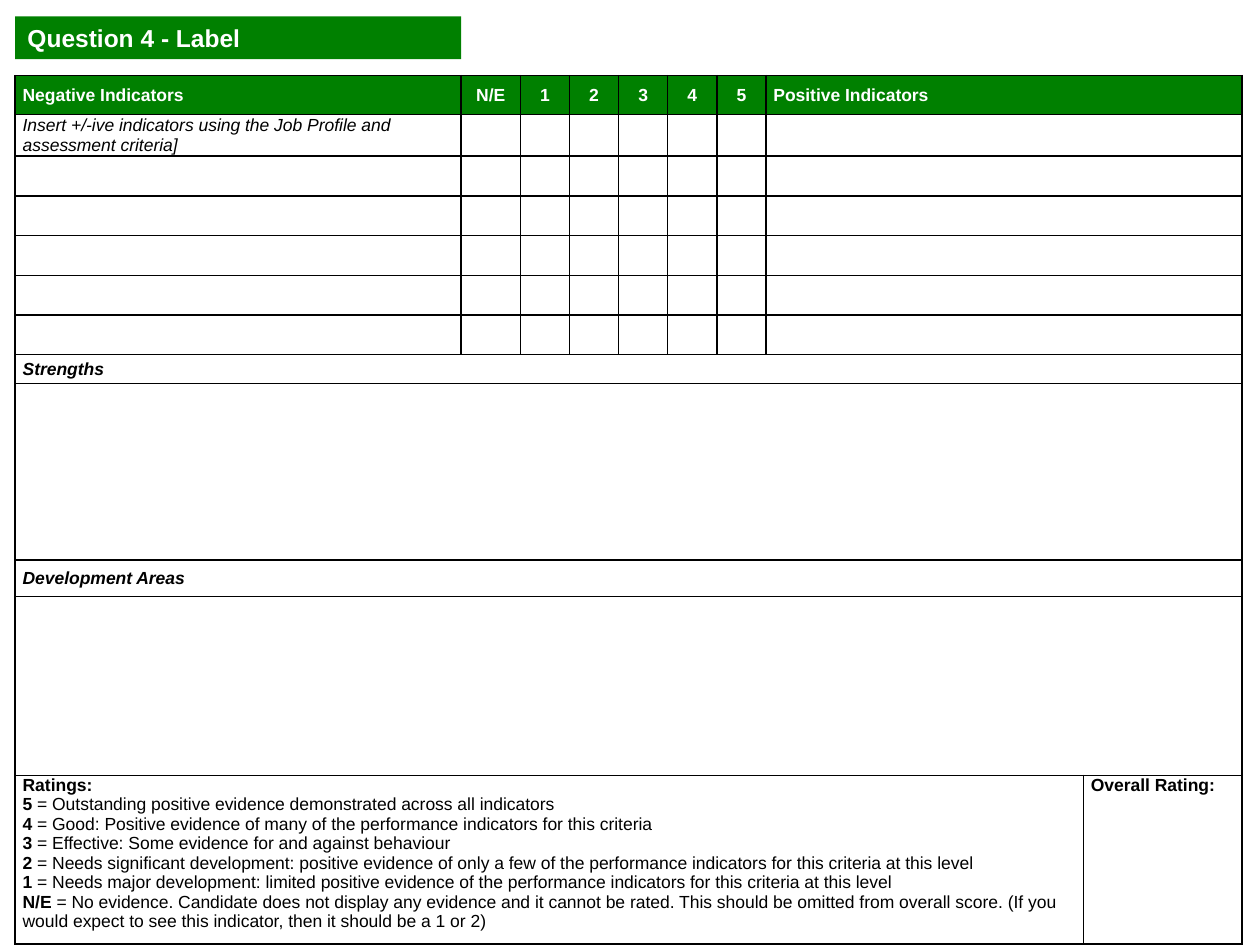
from lxml.etree import SubElement
from pptx import Presentation
from pptx.dml.color import RGBColor
from pptx.enum.shapes import MSO_SHAPE
from pptx.enum.text import MSO_ANCHOR, PP_ALIGN
from pptx.oxml.ns import qn
from pptx.util import Inches, Pt

COLORS = {"green": "008000", "white": "FFFFFF", "black": "000000"}
FONT = "Arial"
TITLE = "Question 4 - Label"
HEADS = ["Negative Indicators", "N/E", "1", "2", "3", "4", "5", "Positive Indicators"]
HINT = "Insert +/-ive indicators using the Job Profile and assessment criteria]"
RATINGS = [
    ("5", "Outstanding positive evidence demonstrated across all indicators"),
    ("4", "Good: Positive evidence of many of the performance indicators for this criteria"),
    ("3", "Effective: Some evidence for and against behaviour"),
    ("2", "Needs significant development: positive evidence of only a few of the "
          "performance indicators for this criteria at this level"),
    ("1", "Needs major development: limited positive evidence of the performance "
          "indicators for this criteria at this level"),
    ("N/E", "No evidence. Candidate does not display any evidence and it cannot be rated. "
            "This should be omitted from overall score. (If you would expect to see this "
            "indicator, then it should be a 1 or 2)"),
]
LEFT, TOP = 0.12, 0.6
COLS = [3.54, 0.47] + [0.39] * 5 + [2.52, 1.26]
ROWS = [0.31, 0.33] + [0.315] * 5 + [0.23, 1.4, 0.29, 1.42, 1.34]
STRONG, STRONG_BOX, DEVELOP, DEVELOP_BOX, RATE = range(7, 12)
LAST = len(COLS) - 1


def color(name):
    return RGBColor.from_string(COLORS[name])


def write(frame, lines, size=10, tone="black", italic=False, align=PP_ALIGN.LEFT):
    """Fill a frame with lines, each a list of (text, bold) runs."""
    for i, runs in enumerate(lines):
        para = frame.paragraphs[0] if i == 0 else frame.add_paragraph()
        para.alignment = align
        for text, bold in runs:
            run = para.add_run()
            run.text = text
            font = run.font
            font.name, font.size = FONT, Pt(size)
            font.bold, font.italic = bold, italic
            font.color.rgb = color(tone)


def frame_cell(cell):
    props = cell._tc.get_or_add_tcPr()
    for side in ("lnL", "lnR", "lnT", "lnB"):
        line = SubElement(props, qn(f"a:{side}"), w=str(Pt(1)))
        fill = SubElement(line, qn("a:solidFill"))
        SubElement(fill, qn("a:srgbClr"), val=COLORS["black"])


def add_title(slide):
    bar = slide.shapes.add_shape(MSO_SHAPE.RECTANGLE, Inches(LEFT), Inches(0.13),
                                 Inches(COLS[0]), Inches(0.34))
    bar.shadow.inherit = False
    bar.fill.solid()
    bar.fill.fore_color.rgb = color("green")
    bar.line.fill.background()
    bar.text_frame.word_wrap = True
    write(bar.text_frame, [[(TITLE, True)]], size=14, tone="white")


def add_grid(slide):
    grid = slide.shapes.add_table(len(ROWS), len(COLS), Inches(LEFT), Inches(TOP),
                                  Inches(sum(COLS)), Inches(sum(ROWS))).table
    for col, width in zip(grid.columns, COLS):
        col.width = Inches(width)
    for row, height in zip(grid.rows, ROWS):
        row.height = Inches(height)

    for r in range(len(ROWS)):
        for c in range(len(COLS)):
            cell = grid.cell(r, c)
            frame_cell(cell)
            if r <= STRONG:
                cell.fill.solid()
                cell.fill.fore_color.rgb = color("white" if r else "green")
            else:
                cell.fill.background()
            cell.margin_left = cell.margin_right = Inches(0.06)
            cell.margin_top = cell.margin_bottom = 0
            cell.vertical_anchor = MSO_ANCHOR.TOP if r == RATE else MSO_ANCHOR.MIDDLE

    for r in range(RATE):
        start = LAST - 1 if r < STRONG else 0
        grid.cell(r, start).merge(grid.cell(r, LAST))
    grid.cell(RATE, 0).merge(grid.cell(RATE, LAST - 1))
    return grid


def fill_grid(grid):
    for c, head in enumerate(HEADS):
        outer = c in (0, len(HEADS) - 1)
        write(grid.cell(0, c).text_frame, [[(head, True)]], tone="white",
              align=PP_ALIGN.LEFT if outer else PP_ALIGN.CENTER)
    write(grid.cell(1, 0).text_frame, [[(HINT, False)]], italic=True)
    for r, label in ((STRONG, "Strengths"), (DEVELOP, "Development Areas")):
        write(grid.cell(r, 0).text_frame, [[(label, True)]], italic=True)
    scale = [[(mark, True), (f" = {text}", False)] for mark, text in RATINGS]
    write(grid.cell(RATE, 0).text_frame, [[("Ratings:", True)]] + scale)
    write(grid.cell(RATE, LAST).text_frame, [[("Overall Rating:", True)]])


def main():
    deck = Presentation()
    deck.slide_width, deck.slide_height = Inches(10), Inches(7.5)
    slide = deck.slides.add_slide(deck.slide_layouts[6])
    add_title(slide)
    fill_grid(add_grid(slide))
    deck.save("out.pptx")


if __name__ == "__main__":
    main()
